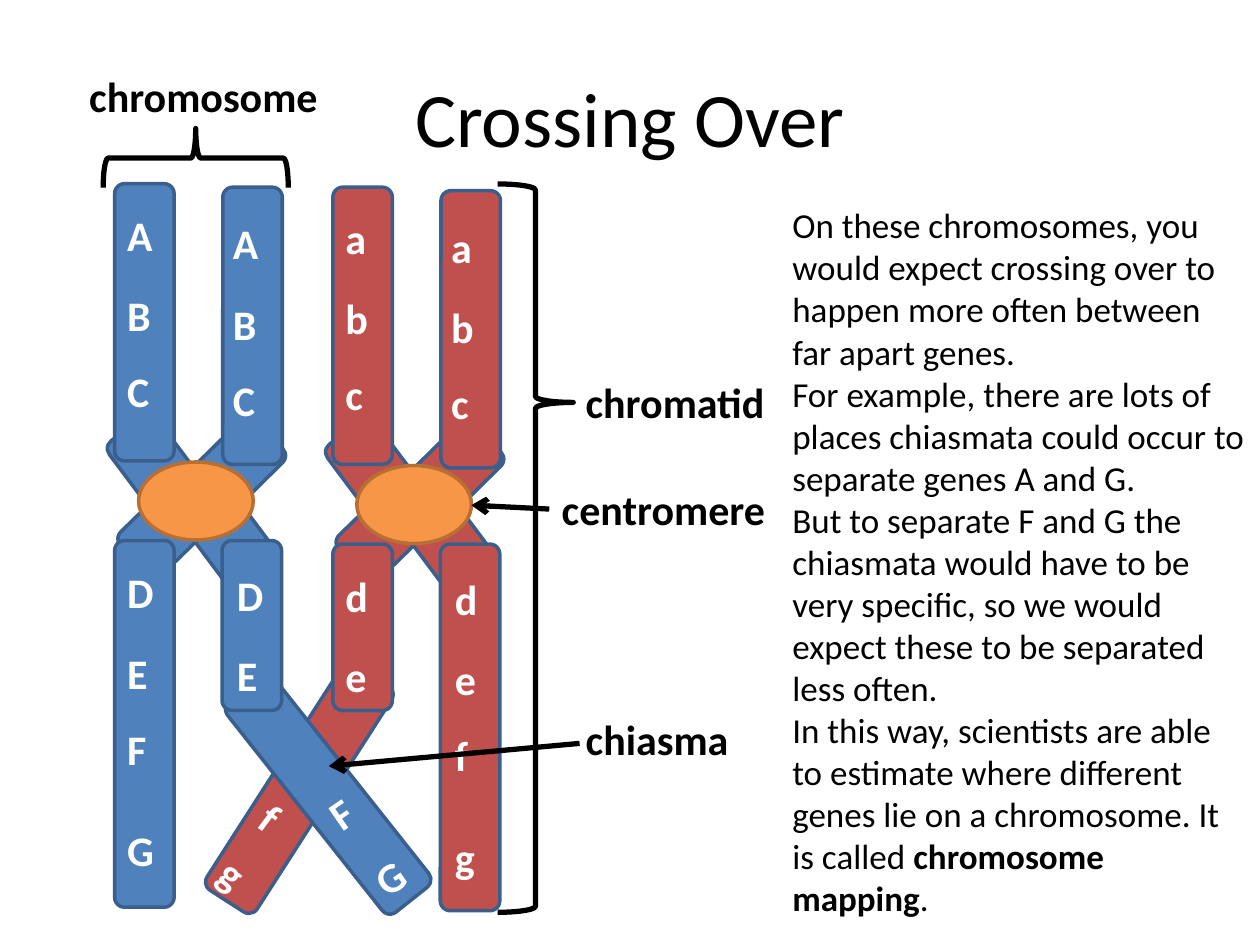
import lxml.etree
import pptx
import pptx.dml.color
import pptx.enum.shapes
import pptx.enum.text
import pptx.oxml.ns
import pptx.util

Pt = pptx.util.Pt
Shape = pptx.enum.shapes.MSO_SHAPE
Fit = pptx.enum.text.MSO_AUTO_SIZE

BLUE, RED, ORANGE = "4F81BD", "C0504D", "F79646"
EDGE, RIM = "3A5F8C", "B76F34"
BLACK, WHITE = "000000", "FFFFFF"
WIDE = 34  # width of a chromatid


def tint(code):
    return pptx.dml.color.RGBColor.from_string(code)


class Board:
    """Holds the text style and the current slide."""

    font = "Calibri"

    def __init__(self, slide):
        self.slide = slide

    def style(self, para, size, color, bold):
        for run in para.runs:
            run.font.name = self.font
            run.font.size = Pt(size)
            run.font.bold = bold
            run.font.color.rgb = tint(color)

    def title(self, text):
        head = self.slide.shapes.title
        head.left, head.top, head.width, head.height = map(Pt, (36, 21.6, 648, 90))
        head.text_frame.text = text
        self.style(head.text_frame.paragraphs[0], 44, BLACK, False)

    def shape(self, kind, box, line, fill=None, weight=2, turn=0):
        item = self.slide.shapes.add_shape(kind, *map(Pt, box))
        item.shadow.inherit = False
        item.rotation = turn
        if fill:
            item.fill.solid()
            item.fill.fore_color.rgb = tint(fill)
        else:
            item.fill.background()
        item.line.color.rgb = tint(line)
        item.line.width = Pt(weight)
        return item

    def rod(self, box, fill, turn=0):
        return self.shape(Shape.ROUNDED_RECTANGLE, box, EDGE, fill, turn=turn)

    def brace(self, box, turn=0):
        return self.shape(Shape.RIGHT_BRACE, box, BLACK, weight=3, turn=turn)

    def text(self, box, text, size=24, color=BLACK, bold=True, wrap=False):
        item = self.slide.shapes.add_textbox(*map(Pt, box))
        frame = item.text_frame
        frame.word_wrap = wrap
        frame.auto_size = Fit.SHAPE_TO_FIT_TEXT
        frame.text = text
        for para in frame.paragraphs:
            self.style(para, size, color, bold)
        return item

    def genes(self, box, names, turn=0, gaps=(17, 14.6, 29.3)):
        item = self.text(box, "\n".join(names), color=WHITE, wrap=True)
        item.rotation = turn
        for para, gap in zip(item.text_frame.paragraphs[1:], gaps):
            para.space_before = Pt(gap)

    def arrow(self, start, end):
        link = self.slide.shapes.add_connector(
            pptx.enum.shapes.MSO_CONNECTOR.STRAIGHT, *map(Pt, start + end))
        link.line.color.rgb = tint(BLACK)
        link.line.width = Pt(3)
        tag = pptx.oxml.ns.qn
        tip = lxml.etree.SubElement(link.line._get_or_add_ln(), tag("a:tailEnd"))
        tip.set("type", "arrow")
        lxml.etree.SubElement(link._element.spPr, tag("a:effectLst"))

    def pair(self, dx, dy, fill, top, left, right):
        """One chromosome: two chromatids joined at a centromere."""
        # Slanted arms
        for x, y, turn in ((71.3, 239.8, 323.1), (115.2, 283, 323.1),
                           (118.1, 240.5, 45.4), (78.5, 275.8, 45.7)):
            self.rod((x + dx, y + dy, WIDE, 52), fill, turn)
        # Upright parts: four genes make a long one, two a short one
        for x, y in ((65.5, 105), (127.3, 107)):
            self.rod((x + dx, y + dy, WIDE, 158.4), fill)
        low = 308.9 + dy
        for x, names in ((65.5, left), (126.9, right)):
            tall = 209.5 if len(names) == 4 else 406 - low
            self.rod((x + dx, low, WIDE, tall), fill)
        self.shape(Shape.OVAL, (79.2 + dx, 264 + dy, 65.5, 44.6), RIM, ORANGE)
        # Gene letters
        for x, y, names in ((65.5, 116, top), (126, 121, top),
                            (65.5, 320.4, left), (128.2, 322, right)):
            tall = {2: 82, 3: 131, 4: 184}[len(names)]
            self.genes((x + dx, y + dy, WIDE, tall), names)


def main():
    deck = pptx.Presentation()
    deck.slide_width, deck.slide_height = Pt(720), Pt(540)
    board = Board(deck.slides.add_slide(deck.slide_layouts[5]))
    board.title("Crossing Over")

    # Crossed ends, behind the chromosomes
    board.rod((154.1, 373.7, WIDE, 153.4), RED, 32.7)
    board.rod((170.6, 377.3, WIDE, 153.4), BLUE, 321.6)

    # Chromosomes
    board.pair(0, 0, BLUE, "ABC", "DEFG", "DE")
    board.pair(124.7, 2, RED, "abc", "de", "defg")

    # Genes on the crossed ends
    board.genes((131, 448.6, WIDE, 75), "fg", 36.6, (9.8,))
    board.genes((194.4, 440, WIDE, 82), "FG", 325.3)

    # Labels
    for x, y, wide, name in ((313.9, 272.9, 131.8, "centromere"),
                             (327.6, 403.9, 97.2, "chiasma"),
                             (43.9, 36.7, 146.2, "chromosome"),
                             (327.6, 211.7, 118.1, "chromatid")):
        board.text((x, y, wide, 36), name)

    # Braces and arrows
    board.brace((95, 37.4, 33.8, 105.8), 270)
    side = board.brace((284.4, 105.1, 43.2, 416.2))
    side.adjustments[0], side.adjustments[1] = 0.08, 0.3
    board.arrow((313.9, 290.9), (269.3, 288.7))
    board.arrow((331.2, 424.8), (187.9, 437.8))

    # Explanation
    lines = (
        "On these chromosomes, you would expect crossing over to happen more "
        "often between far apart genes.",
        "For example, there are lots of places chiasmata could occur to "
        "separate genes A and G.",
        "But to separate F and G the chiasmata would have to be very specific, "
        "so we would expect these to be separated less often.",
        "In this way, scientists are able to estimate where different genes "
        "lie on a chromosome. It is called ",
    )
    note = board.text((445.7, 113, 274.3, 419), "\n".join(lines), 20,
                      bold=False, wrap=True)
    last = note.text_frame.paragraphs[-1]
    for part in ("chromosome mapping", "."):
        last.add_run().text = part
    board.style(last, 20, BLACK, False)
    last.runs[1].font.bold = True

    deck.save("out.pptx")


if __name__ == "__main__":
    main()
